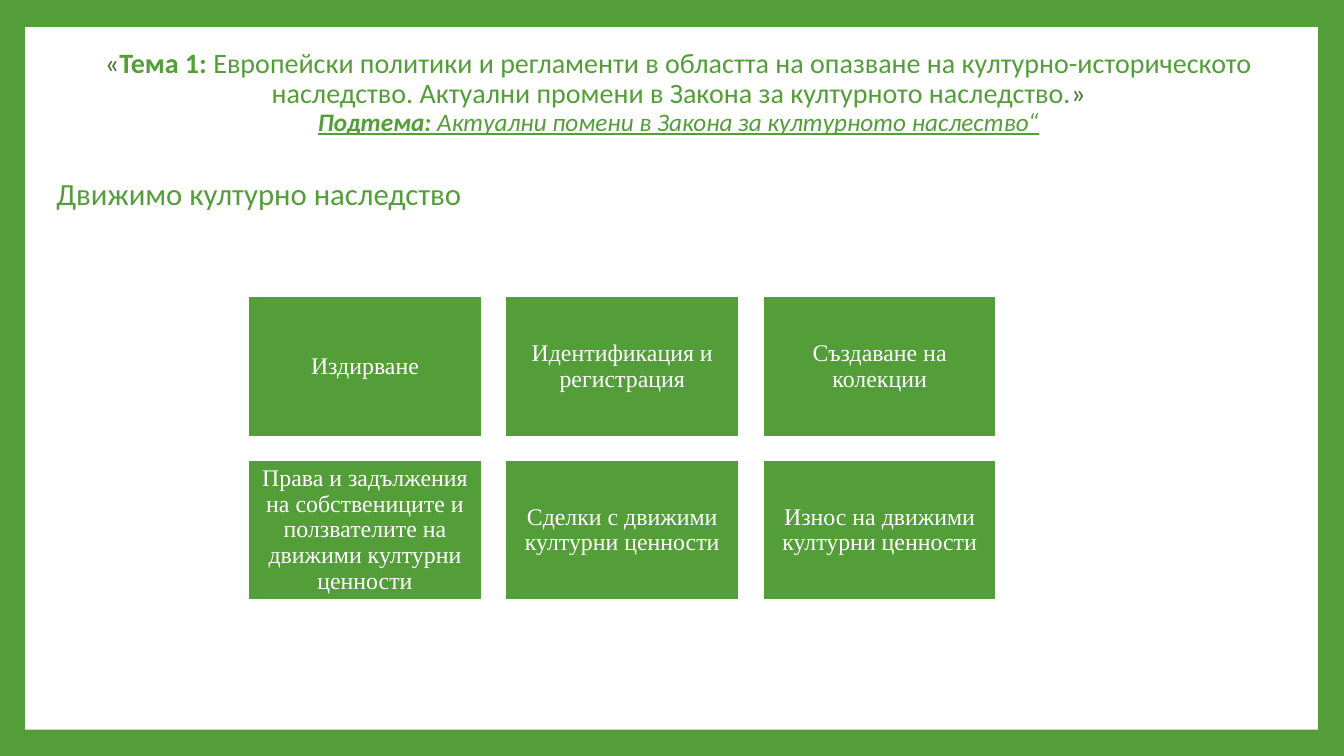
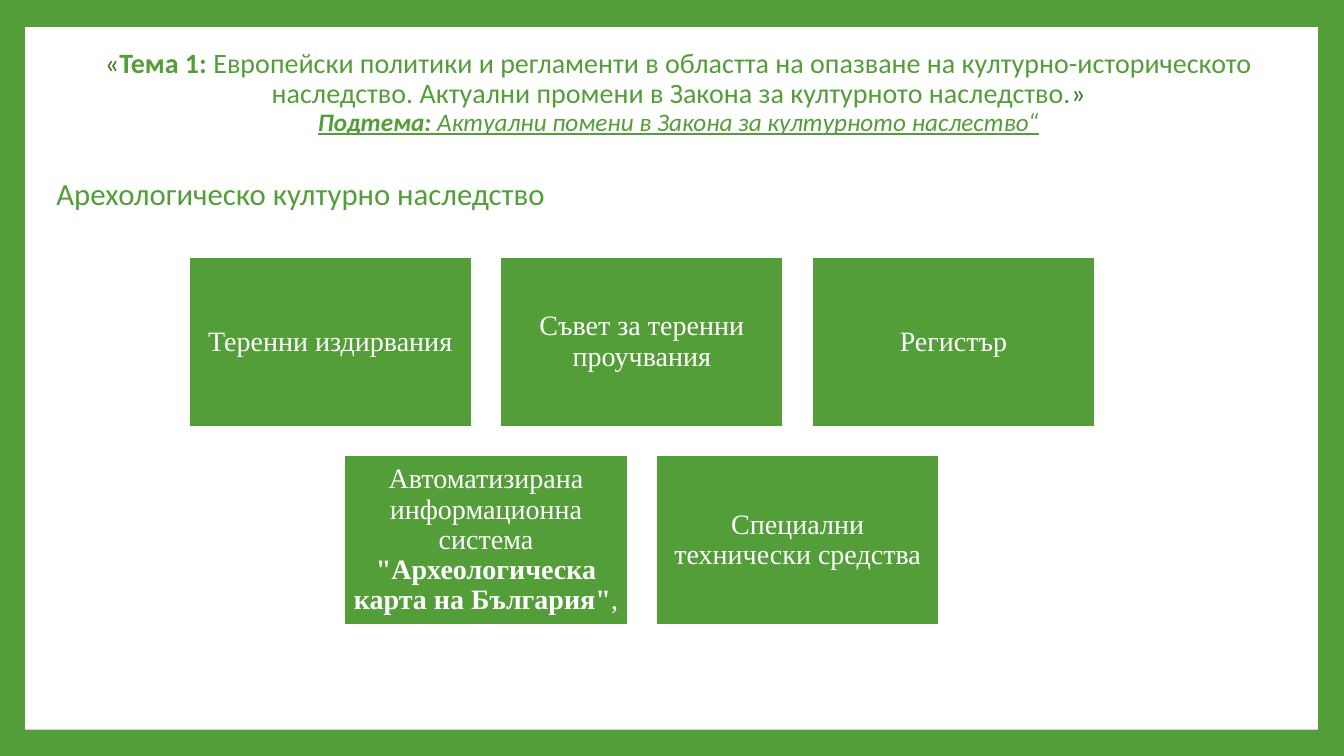
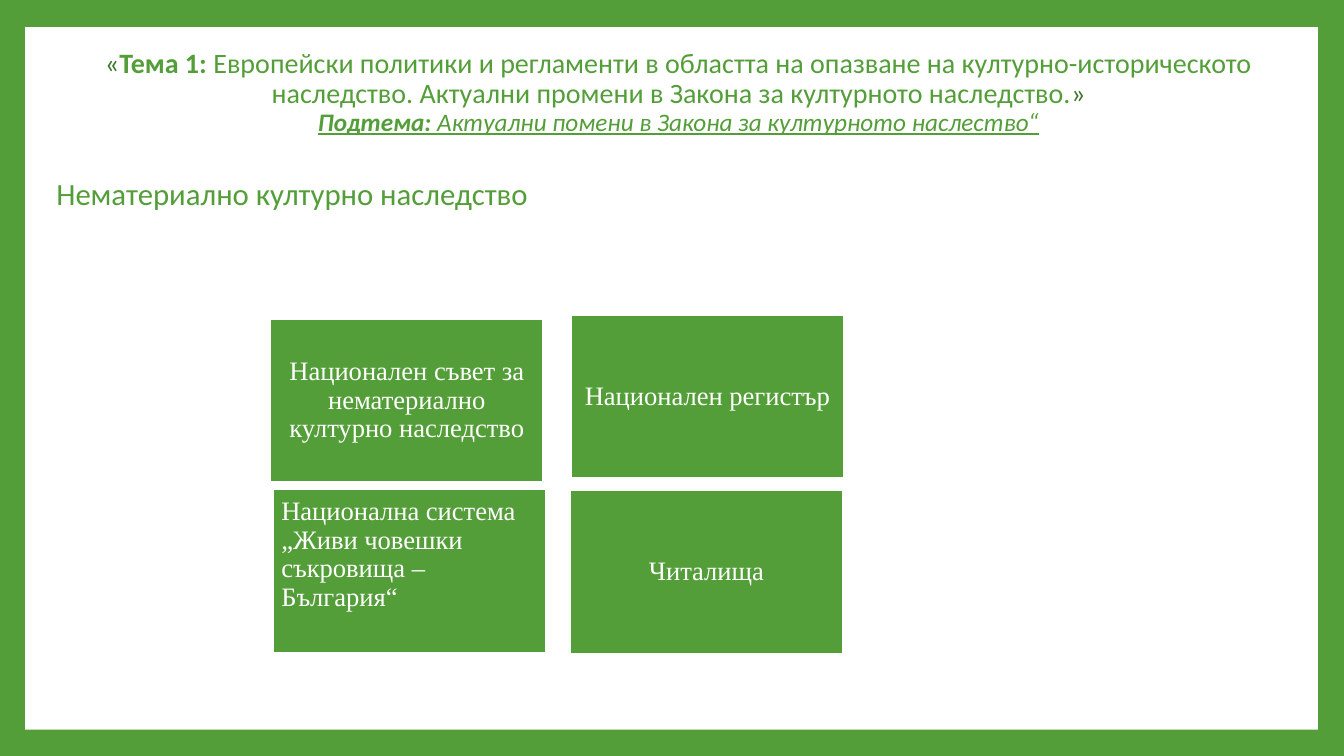
from dataclasses import dataclass
from typing import NamedTuple

from pptx import Presentation
from pptx import util as u
from pptx.dml.color import RGBColor
from pptx.enum import shapes, text

GREEN, DARK_GREEN, WHITE = "549E39", "3F762B", "FFFFFF"
HEADING_FONT, TILE_FONT = "Calibri", "Times New Roman"
LINE_SPACING = 0.9
TEXT_LEFT, TEXT_WIDTH = 0.41, 12.59


class Piece(NamedTuple):
    """A stretch of text with its own weight and colour."""
    wording: str
    bold: bool = False
    color: str = GREEN


@dataclass(frozen=True)
class Tile:
    pieces: tuple[Piece, ...]
    shift: tuple[float, float] = (0, 0)
    centred: bool = True


@dataclass(frozen=True)
class Topic:
    """A heading over rows of tiles; height and gap follow the tile width."""
    heading: str
    left: float
    top: float
    tile_width: float
    font_size: int
    rows: tuple[tuple[Tile, ...], ...]
    row_gap: float = 0.1


def tile(wording: str, shift: tuple[float, float] = (0, 0), centred: bool = True) -> Tile:
    return Tile((Piece(wording, color=WHITE),), shift, centred)


THEME = (
    Piece("«", color=DARK_GREEN),
    Piece("Тема 1: ", bold=True),
    Piece("Европейски политики и регламенти в областта на опазване на "
          "културно-историческото наследство. Актуални промени в Закона за "
          "културното наследство."),
    Piece("»", color=DARK_GREEN),
)
SUBTHEME = (
    Piece("Подтема: ", bold=True),
    Piece("Актуални помени в Закона за културното наслество“"),
)

TOPICS = (
    Topic("Движимо културно наследство", 2.46, 2.94, 2.32, 17, (
        (tile("Издирване"),
         tile("Идентификация и регистрация"),
         tile("Създаване на колекции")),
        (tile("Права и задължения на собствениците и ползвателите на движими "
              "културни ценности"),
         tile("Сделки с движими културни ценности"),
         tile("Износ на движими културни ценности")),
    )),
    Topic("Арехологическо културно наследство", 1.87, 2.55, 2.81, 20, (
        (tile("Теренни издирвания"),
         tile("Съвет за теренни проучвания"),
         tile("Регистър")),
        (Tile((Piece("Автоматизирана информационна система ", color=WHITE),
               Piece('"Археологическа карта на България"', True, WHITE),
               Piece(",", color=WHITE))),
         tile("Специални технически средства")),
    )),
    Topic("Нематериално културно наследство", 2.68, 3.12, 2.71, 19, (
        (tile("Национален съвет за нематериално културно наследство", (0, 0.04)),
         tile("Национален регистър")),
        (tile("Национална система „Живи човешки съкровища – България“",
              (0.03, 0), centred=False),
         tile("Читалища", (-0.01, 0.01))),
    ), row_gap=0.04),
)


def rgb(color: str) -> RGBColor:
    return RGBColor.from_string(color)


def box(left: float, top: float, width: float, height: float) -> tuple:
    return tuple(u.Inches(length) for length in (left, top, width, height))


def write(paragraph, pieces: tuple[Piece, ...], font: str, size: int,
          align=text.PP_ALIGN.LEFT) -> None:
    paragraph.alignment = align
    paragraph.line_spacing = LINE_SPACING
    paragraph.font.name = font
    paragraph.font.size = u.Pt(size)
    for piece in pieces:
        run = paragraph.add_run()
        run.text = piece.wording
        run.font.bold = piece.bold
        run.font.color.rgb = rgb(piece.color)


def add_rectangle(slide, place: tuple, color: str):
    rectangle = slide.shapes.add_shape(shapes.MSO_SHAPE.RECTANGLE, *place)
    rectangle.shadow.inherit = False
    rectangle.fill.solid()
    rectangle.fill.fore_color.rgb = rgb(color)
    rectangle.line.fill.background()
    return rectangle


def add_text_frame(slide, top: float, height: float):
    frame = slide.shapes.add_textbox(*box(TEXT_LEFT, top, TEXT_WIDTH, height)).text_frame
    frame.word_wrap = True
    frame.margin_left = u.Inches(0.15)
    return frame


def add_title(slide) -> None:
    frame = add_text_frame(slide, 0.34, 1.16)
    frame.vertical_anchor = text.MSO_ANCHOR.MIDDLE
    write(frame.paragraphs[0], THEME, HEADING_FONT, 20, text.PP_ALIGN.CENTER)
    subtheme = frame.add_paragraph()
    write(subtheme, SUBTHEME, HEADING_FONT, 18, text.PP_ALIGN.CENTER)
    subtheme.font.italic = True
    subtheme.font.underline = True


def add_tile(slide, item: Tile, place: tuple, size: int) -> None:
    card = add_rectangle(slide, place, GREEN)
    card.line.color.rgb = rgb(WHITE)
    card.line.width = u.Pt(1.5)
    frame = card.text_frame
    frame.word_wrap = True
    frame.margin_left = frame.margin_right = u.Inches(0.08)
    frame.margin_top = frame.margin_bottom = u.Inches(0.08)
    frame.vertical_anchor = text.MSO_ANCHOR.MIDDLE if item.centred else text.MSO_ANCHOR.TOP
    align = text.PP_ALIGN.CENTER if item.centred else text.PP_ALIGN.LEFT
    write(frame.paragraphs[0], item.pieces, TILE_FONT, size, align)


def add_tiles(slide, topic: Topic) -> None:
    width, height = topic.tile_width, topic.tile_width * 0.6
    column_step = width * 1.1
    row_step = height + width * topic.row_gap
    columns = max(len(row) for row in topic.rows)
    for row_index, row in enumerate(topic.rows):
        # A shorter row is centred under the longest one
        indent = (columns - len(row)) / 2
        for column, item in enumerate(row):
            left = topic.left + (indent + column) * column_step + item.shift[0]
            top = topic.top + row_index * row_step + item.shift[1]
            add_tile(slide, item, box(left, top, width, height), topic.font_size)


def add_topic(deck, topic: Topic) -> None:
    slide = deck.slides.add_slide(deck.slide_layouts[6])
    # White panel inside the green border
    add_rectangle(slide, box(0.25, 0.27, 12.82, 6.97), WHITE)
    add_title(slide)
    heading = add_text_frame(slide, 1.73, 0.5)
    write(heading.paragraphs[0], (Piece(topic.heading),), HEADING_FONT, 22)
    add_tiles(slide, topic)


def main() -> None:
    deck = Presentation()
    deck.slide_width, deck.slide_height = u.Inches(13.33), u.Inches(7.5)
    # Shared green background
    backdrop = deck.slide_master.background.fill
    backdrop.solid()
    backdrop.fore_color.rgb = rgb(GREEN)
    for topic in TOPICS:
        add_topic(deck, topic)
    deck.save("out.pptx")


if __name__ == "__main__":
    main()
